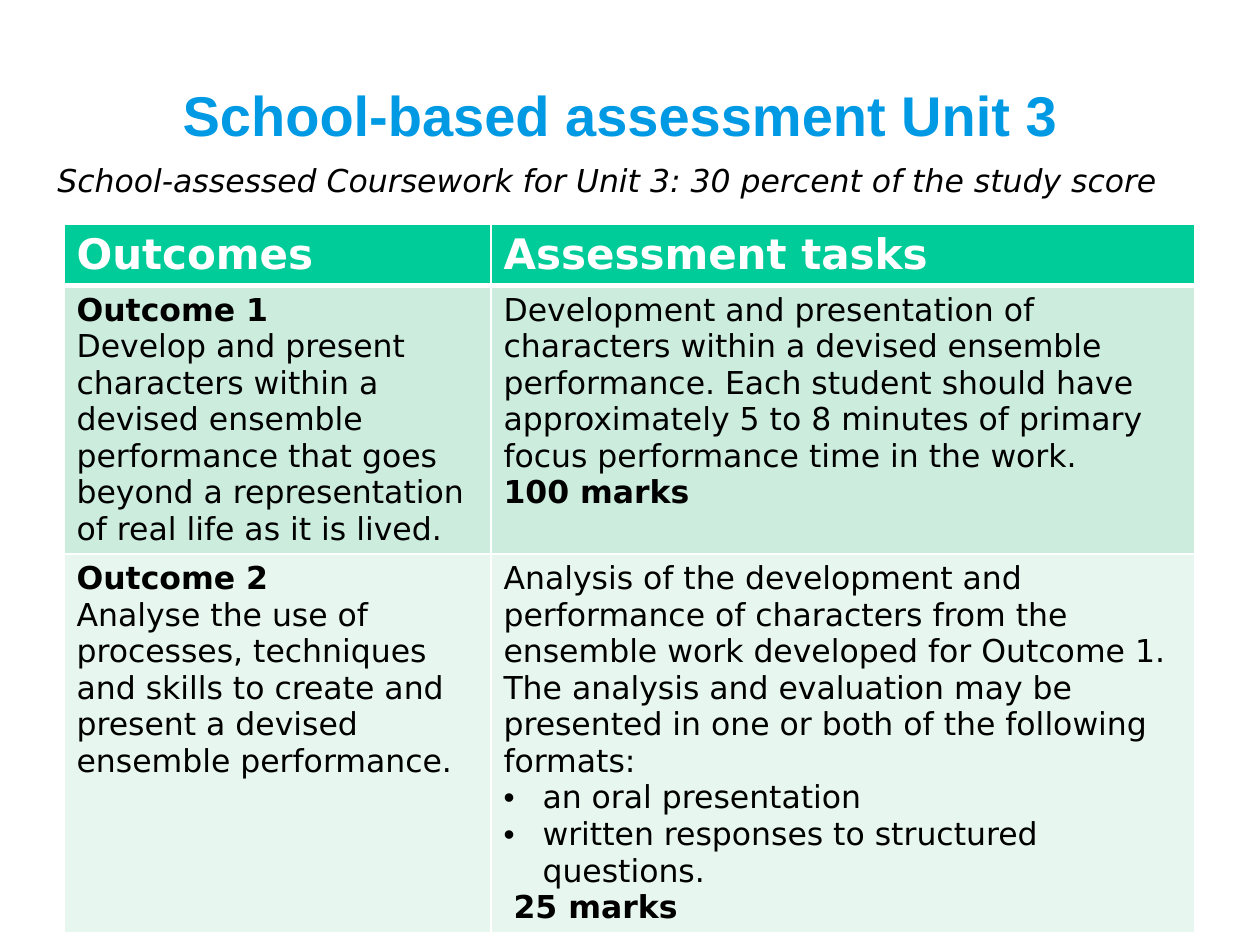
from pptx import Presentation
from pptx import util as u
from pptx.dml.color import RGBColor
from pptx.enum import text
from pptx.oxml.ns import qn
from lxml import etree

# Content: each cell is a list of (style, text) paragraphs
TITLE = "School-based assessment Unit 3"
SUBTITLE = "School-assessed Coursework for Unit 3: 30 percent of the study score"
ROWS = [
    [[("head", "Outcomes")], [("head", "Assessment tasks")]],
    [
        [("strong", "Outcome 1"),
         ("plain", "Develop and present characters within a devised ensemble performance "
                   "that goes beyond a representation of real life as it is lived.")],
        [("plain", "Development and presentation of characters within a devised ensemble "
                   "performance. Each student should have approximately 5 to 8 minutes of "
                   "primary focus performance time in the work."),
         ("strong", "100 marks")],
    ],
    [
        [("strong", "Outcome 2"),
         ("plain", "Analyse the use of processes, techniques and skills to create and "
                   "present a devised ensemble performance.")],
        [("plain", "Analysis of the development and performance of characters from the "
                   "ensemble work developed for Outcome 1. The analysis and evaluation may "
                   "be presented in one or both of the following formats:"),
         ("bullet", "an oral presentation"),
         ("bullet", "written responses to structured questions."),
         ("inset", "25 marks")],
    ],
]

# Look
COLORS = {"title": "0099E3", "text": "000000", "white": "FFFFFF"}
ROW_FILLS = ["00CC99", "CCECDE", "E7F6EF"]
# style: size, bold, colour, left margin px, first-line indent px
STYLES = {
    "head": (24, True, "white", 0, 0),
    "strong": (18, True, "text", 0, 0),
    "plain": (18, False, "text", 0, 0),
    "bullet": (18, False, "text", 39, -39),
    "inset": (18, True, "text", 10, 0),
}
COLUMN_WIDTHS = [427, 704]
ROW_HEIGHTS = [57, 215, 275]
BODY_FONT = "DejaVu Sans"


def px(value):
    return u.Emu(round(value * 914400 / 126))


def set_font(font, name, size, color, bold=False, italic=False):
    font.name, font.size = name, u.Pt(size)
    font.bold, font.italic = bold, italic
    font.color.rgb = RGBColor.from_string(COLORS[color])


def write_paragraph(para, style, words):
    size, bold, color, margin, indent = STYLES[style]
    para.text = words
    props = para._p.get_or_add_pPr()
    props.set("marL", str(px(margin)))
    props.set("indent", str(px(indent)))
    if style == "bullet":
        etree.SubElement(props, qn("a:buFont"), typeface="Arial")
        etree.SubElement(props, qn("a:buChar"), char="•")
    for span in para.runs:
        set_font(span.font, BODY_FONT, size, color, bold)


def add_borders(cell, widths):
    props = cell._tc.get_or_add_tcPr()
    for position, (side, width) in enumerate(widths.items()):
        line = etree.Element(qn("a:ln" + side), w=str(u.Pt(width)))
        fill = etree.SubElement(line, qn("a:solidFill"))
        etree.SubElement(fill, qn("a:srgbClr"), val=COLORS["white"])
        props.insert(position, line)


deck = Presentation()
deck.slide_width, deck.slide_height = px(1260), px(945)
page = deck.slides.add_slide(deck.slide_layouts[5])

# Title
title = page.shapes.title
title.left, title.top, title.width, title.height = map(px, (64, 45, 1113, 139))
title.text_frame.text = TITLE
title.text_frame.vertical_anchor = text.MSO_ANCHOR.MIDDLE
heading = title.text_frame.paragraphs[0]
heading.alignment = text.PP_ALIGN.CENTER
set_font(heading.runs[0].font, "Arial", 32, "title", bold=True)

# Assessment table
table = page.shapes.add_table(
    len(ROWS), len(COLUMN_WIDTHS), px(64), px(224),
    px(sum(COLUMN_WIDTHS)), px(sum(ROW_HEIGHTS))).table
for column, width in zip(table.columns, COLUMN_WIDTHS):
    column.width = px(width)
for r, (cells, height) in enumerate(zip(ROWS, ROW_HEIGHTS)):
    table.rows[r].height = px(height)
    for c, paragraphs in enumerate(cells):
        cell = table.cell(r, c)
        cell.fill.solid()
        cell.fill.fore_color.rgb = RGBColor.from_string(ROW_FILLS[r])
        add_borders(cell, {"L": 1, "R": 1, "T": 3 if r == 1 else 1, "B": 3 if r == 0 else 1})
        frame = cell.text_frame
        for i, (style, words) in enumerate(paragraphs):
            para = frame.add_paragraph() if i else frame.paragraphs[0]
            write_paragraph(para, style, words)

# Subtitle
box = page.shapes.add_textbox(px(45), px(155), px(1141), px(50))
box.text_frame.word_wrap = True
box.text_frame.text = SUBTITLE
set_font(box.text_frame.paragraphs[0].runs[0].font, BODY_FONT, 18, "text", italic=True)

deck.save("out.pptx")
